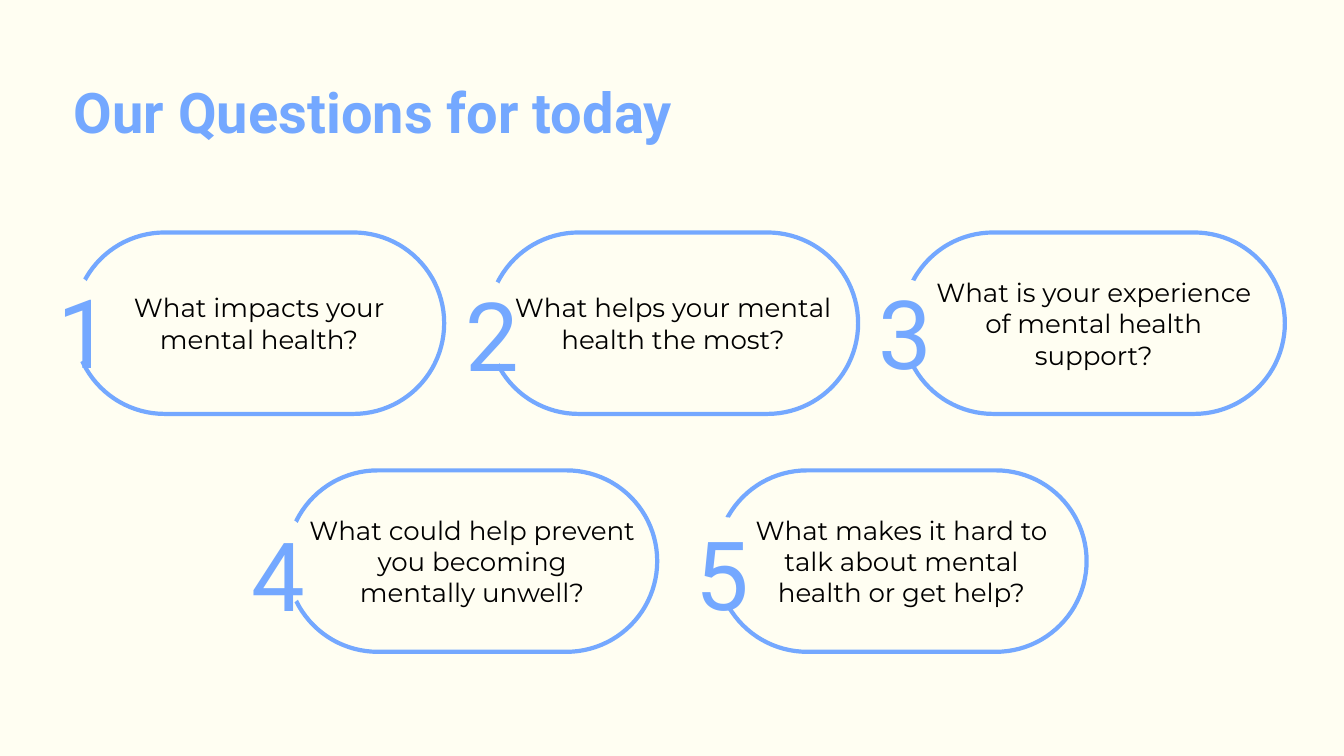
from dataclasses import dataclass

from pptx import Presentation
from pptx.dml.color import RGBColor
from pptx.enum.shapes import MSO_SHAPE
from pptx.enum.text import MSO_ANCHOR, MSO_AUTO_SIZE, PP_ALIGN
from pptx.util import Inches, Pt

PILL, OVAL = MSO_SHAPE.ROUNDED_RECTANGLE, MSO_SHAPE.OVAL
TOP, MIDDLE = MSO_ANCHOR.TOP, MSO_ANCHOR.MIDDLE
LEFT, CENTER = PP_ALIGN.LEFT, PP_ALIGN.CENTER
NO_AUTOFIT = MSO_AUTO_SIZE.NONE
TITLE_ONLY = 5

COLOURS = {"cream": "FFFEF2", "blue": "74A8FF", "black": "000000"}
HEADING_FONT, BODY_FONT = "Roboto", "Montserrat"
PILL_HEIGHT = 2.7
UPPER_ROW, LOWER_ROW = 3.46, 7


@dataclass
class Question:
    text: str
    left: float
    top: float
    gap: tuple  # left and top of the oval that opens the outline
    number: tuple  # left, top and width of the numeral
    width: float = 5.51


QUESTIONS = [
    Question("What impacts your\nmental health?",
             1.1, UPPER_ROW, (0.66, 4.11), (0.85, 3.78, 0.65)),
    Question("What helps your mental health the most?",
             7.26, UPPER_ROW, (6.83, 4.17), (6.93, 3.82, 0.68)),
    Question("What is your experience\nof mental health\nsupport?",
             13.43, UPPER_ROW, (13.08, 4.17), (13.08, 3.8, 0.72), 5.69),
    Question("What could help prevent\nyou becoming\nmentally unwell?",
             4.27, LOWER_ROW, (3.8, 7.71), (3.75, 7.39, 0.76)),
    Question("What makes it hard to\ntalk about mental\nhealth or get help?",
             10.66, LOWER_ROW, (10.38, 7.71), (10.35, 7.38, 0.74)),
]


def colour(name):
    return RGBColor.from_string(COLOURS[name])


def write(box, text, size, font, ink, align=CENTER, anchor=TOP,
          inset=0.0, spacing=None, bold=False):
    """Fill a text box or placeholder and format every paragraph."""
    frame = box.text_frame
    frame.text = text
    frame.word_wrap = True
    frame.auto_size = NO_AUTOFIT
    frame.vertical_anchor = anchor
    frame.margin_left = frame.margin_right = Inches(inset)
    frame.margin_top = frame.margin_bottom = Inches(inset)
    for para in frame.paragraphs:
        para.alignment = align
        if spacing:
            para.line_spacing = Pt(spacing)
        for span in para.runs:
            span.font.size = Pt(size)
            span.font.name = font
            span.font.bold = bold
            span.font.color.rgb = colour(ink)


def add_title(page, text):
    title = page.shapes.title
    title.left, title.top = Inches(1.1), Inches(0.98)
    title.width, title.height = Inches(14.75), Inches(1.13)
    write(title, text, 60, HEADING_FONT, "blue", align=LEFT,
          spacing=84, bold=True)


def add_outlined(page, kind, area, line, width):
    shape = page.shapes.add_shape(kind, *map(Inches, area))
    shape.shadow.inherit = False
    shape.fill.background()
    shape.line.color.rgb = colour(line)
    shape.line.width = Pt(width)
    return shape


def add_question(page, number, question):
    area = (question.left, question.top, question.width, PILL_HEIGHT)

    # Pill outline and its question
    pill = add_outlined(page, PILL, area, "blue", 4.5)
    pill.adjustments[0] = 0.5
    box = page.shapes.add_textbox(*map(Inches, area))
    write(box, question.text, 28, BODY_FONT, "black",
          anchor=MIDDLE, inset=0.06)

    # Gap in the outline
    gap = add_outlined(page, OVAL, (*question.gap, 0.83, 1.29), "cream", 2)
    gap.fill.solid()
    gap.fill.fore_color.rgb = colour("cream")

    # Numeral
    numeral = page.shapes.add_textbox(*map(Inches, (*question.number, 1.92)))
    write(numeral, str(number), 102.3, HEADING_FONT, "blue", spacing=143.3)


def main():
    deck = Presentation()
    deck.slide_width, deck.slide_height = Inches(20), Inches(11.25)
    page = deck.slides.add_slide(deck.slide_layouts[TITLE_ONLY])
    page.background.fill.solid()
    page.background.fill.fore_color.rgb = colour("cream")

    add_title(page, "Our Questions for today")
    for number, question in enumerate(QUESTIONS, start=1):
        add_question(page, number, question)

    deck.save("out.pptx")


if __name__ == "__main__":
    main()
